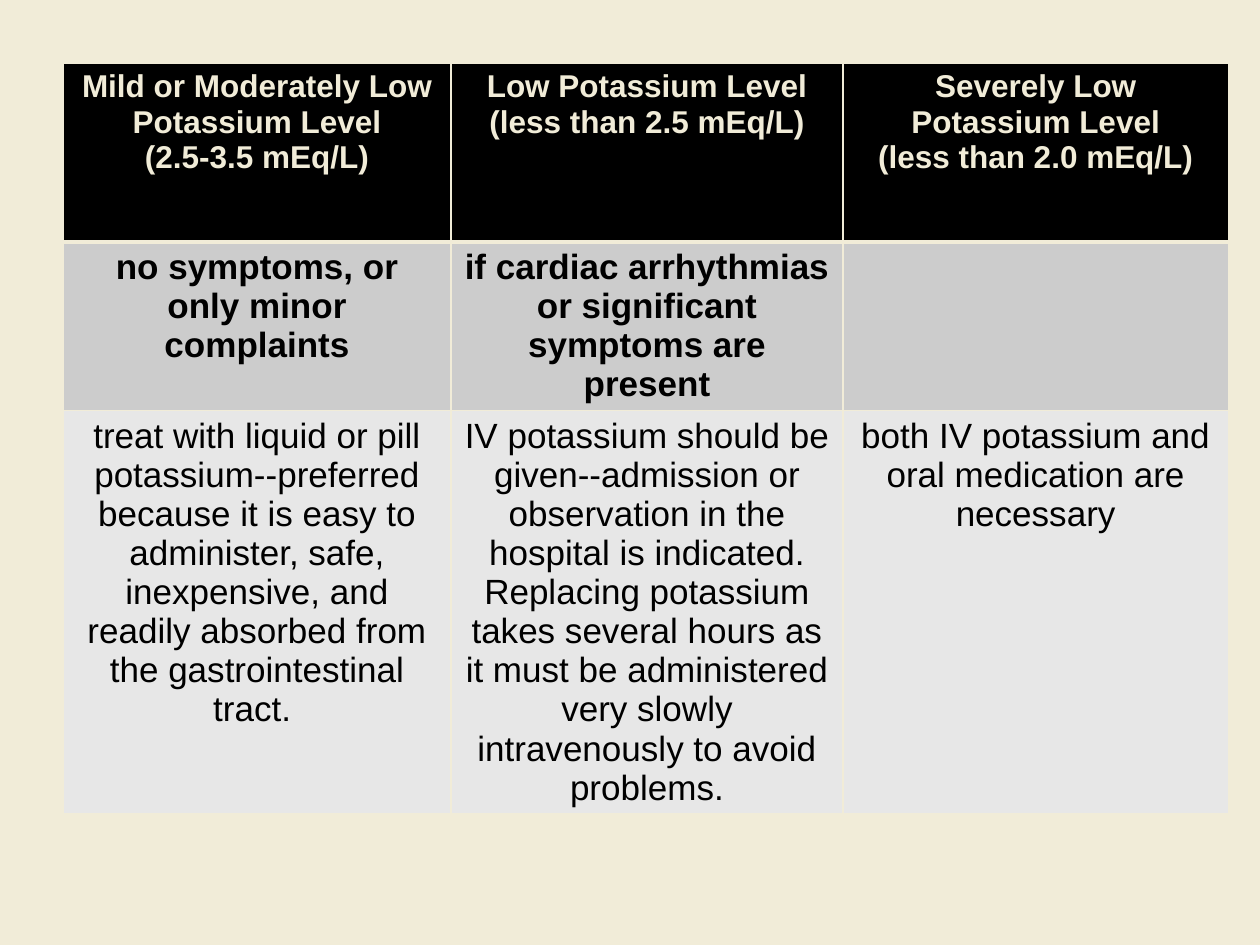
from lxml.etree import SubElement
from pptx import Presentation
from pptx.dml.color import RGBColor
from pptx.enum.text import PP_ALIGN
from pptx.oxml.ns import qn
from pptx.util import Inches, Pt

CREAM, BLACK = "F1ECD8", "000000"
WIDTHS = (3.08, 3.11, 3.06)

# Each cell is a list of paragraphs.
ROWS = [
    dict(height=1.42, fill=BLACK, top=1, bottom=3,
         text=dict(size=18, color=CREAM, bold=True),
         cells=[["Mild or Moderately Low Potassium Level", "(2.5-3.5 mEq/L)"],
                ["Low Potassium Level", "(less than 2.5 mEq/L)"],
                ["Severely Low Potassium Level", "(less than 2.0 mEq/L)"]]),
    dict(height=1.19, fill="CCCCCC", top=3, bottom=1,
         text=dict(size=20, color=BLACK, bold=True),
         cells=[["no symptoms, or only minor complaints"],
                ["if cardiac arrhythmias or significant symptoms are present"],
                []]),
    dict(height=2.4, fill="E7E7E7", top=1, bottom=1,
         text=dict(size=20, color=BLACK, bold=False),
         cells=[["treat with liquid or pill potassium--preferred because it is "
                 "easy to administer, safe, inexpensive, and readily absorbed "
                 "from the gastrointestinal tract. "],
                ["IV potassium should be given--admission or observation in the "
                 "hospital is indicated. Replacing potassium takes several hours "
                 "as it must be administered very slowly intravenously to avoid "
                 "problems."],
                ["both IV potassium and oral medication are necessary"]]),
]


def paint(fill, color):
    fill.solid()
    fill.fore_color.rgb = RGBColor.from_string(color)


def write(frame, lines, size, color, bold):
    for i, line in enumerate(lines):
        para = frame.add_paragraph() if i else frame.paragraphs[0]
        para.alignment = PP_ALIGN.CENTER
        run = para.add_run()
        run.text = line
        font = run.font
        font.name, font.size, font.bold = "Arial", Pt(size), bold
        paint(font.fill, color)


def border(cell, top, bottom):
    """Draw the four edges; they must come before the fill in the XML."""
    props = cell._tc.get_or_add_tcPr()
    edges = (("L", 1), ("R", 1), ("T", top), ("B", bottom))
    for i, (side, width) in enumerate(edges):
        line = SubElement(props, qn(f"a:ln{side}"), w=str(Pt(width)))
        solid = SubElement(line, qn("a:solidFill"))
        SubElement(solid, qn("a:srgbClr"), val=CREAM)
        props.insert(i, line)


def main():
    deck = Presentation()
    deck.slide_width, deck.slide_height = Inches(10), Inches(7.5)
    slide = deck.slides.add_slide(deck.slide_layouts[6])
    paint(slide.background.fill, CREAM)

    high = sum(row["height"] for row in ROWS)
    table = slide.shapes.add_table(
        len(ROWS), len(WIDTHS), Inches(0.5), Inches(0.5),
        Inches(sum(WIDTHS)), Inches(high)).table
    for col, width in zip(table.columns, WIDTHS):
        col.width = Inches(width)
    for r, row in enumerate(ROWS):
        table.rows[r].height = Inches(row["height"])
        for c, lines in enumerate(row["cells"]):
            cell = table.cell(r, c)
            write(cell.text_frame, lines, **row["text"])
            paint(cell.fill, row["fill"])
            border(cell, row["top"], row["bottom"])

    deck.save("out.pptx")


if __name__ == "__main__":
    main()
